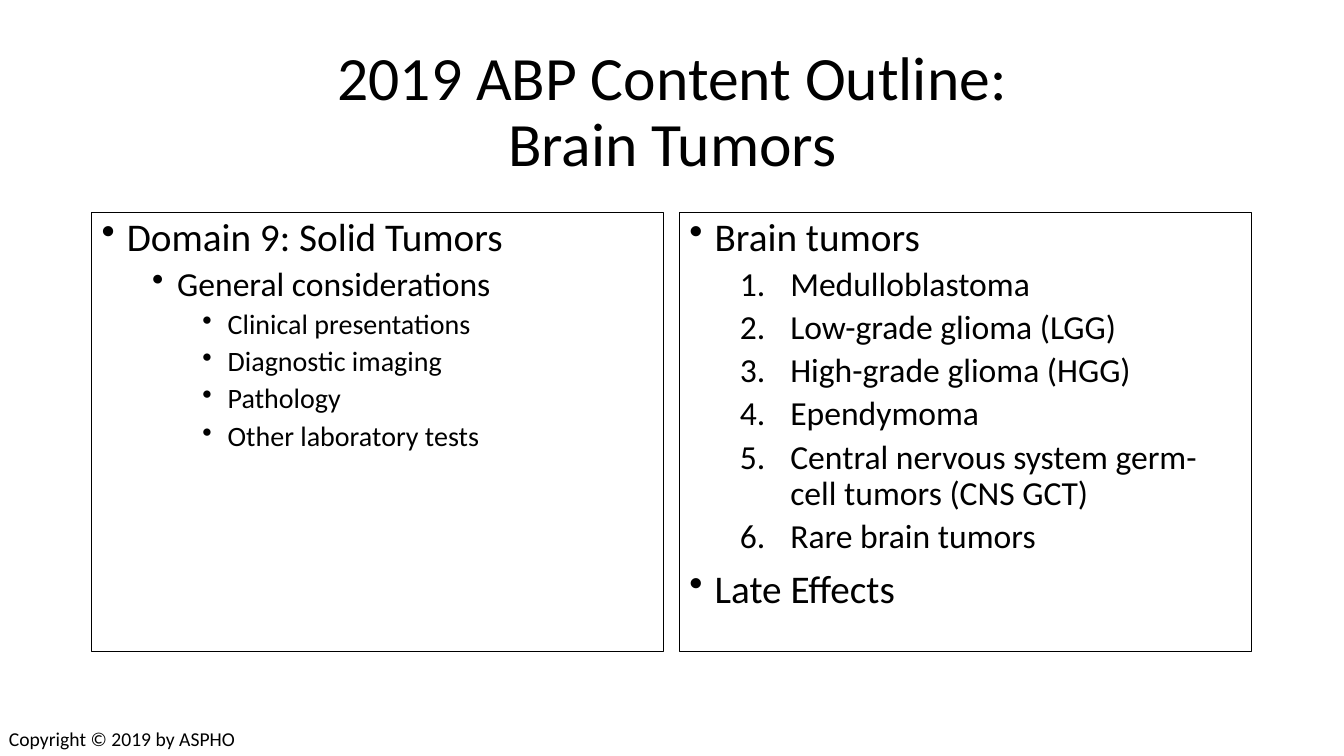
"""Build the brain tumors content outline slide."""
import pptx
import pptx.util
import pptx.dml.color
import pptx.enum.shapes
import pptx.enum.text
import pptx.oxml.ns
import lxml.etree

PX = 9144
COLORS = {"ink": "000000"}
LEFT = pptx.enum.text.PP_ALIGN.LEFT
CENTER = pptx.enum.text.PP_ALIGN.CENTER
TOP = pptx.enum.text.MSO_ANCHOR.TOP
MIDDLE = pptx.enum.text.MSO_ANCHOR.MIDDLE


def write(frame, text, size, align=LEFT, spacing=1.0, before=0, level=0,
          margin=0, hanging=0, bullet=None):
    first = not frame.paragraphs[0].runs
    paragraph = frame.paragraphs[0] if first else frame.add_paragraph()
    paragraph.text = text
    paragraph.alignment = align
    paragraph.line_spacing = spacing
    paragraph.space_before = pptx.util.Pt(0 if first else before)
    paragraph.level = level
    if bullet:
        properties = paragraph._p.get_or_add_pPr()
        properties.set("marL", str(margin * PX))
        properties.set("indent", str(-hanging * PX))
        tag, attribute, value = bullet
        mark = lxml.etree.SubElement(properties, pptx.oxml.ns.qn(tag))
        mark.set(attribute, value)
    for run in paragraph.runs:
        run.font.name = "Calibri"
        run.font.size = pptx.util.Pt(size)
        run.font.color.rgb = pptx.dml.color.RGBColor.from_string(COLORS["ink"])


DOT = ("a:buChar", "char", "•")
NUMBER = ("a:buAutoNum", "type", "arabicPeriod")
STYLES = {
    "topic": dict(size=28, before=10, level=0, margin=25, hanging=25, bullet=DOT),
    "subtopic": dict(size=24, before=5, level=1, margin=75, hanging=25, bullet=DOT),
    "detail": dict(size=20, before=5, level=2, margin=125, hanging=25, bullet=DOT),
    "numbered": dict(size=24, before=5, level=1, margin=100, hanging=50, bullet=NUMBER),
}
PANELS = [
    [
        ("topic", "Domain 9: Solid Tumors"),
        ("subtopic", "General considerations"),
        ("detail", "Clinical presentations"),
        ("detail", "Diagnostic imaging"),
        ("detail", "Pathology"),
        ("detail", "Other laboratory tests"),
    ],
    [
        ("topic", "Brain tumors"),
        ("numbered", "Medulloblastoma"),
        ("numbered", "Low-grade glioma (LGG)"),
        ("numbered", "High-grade glioma (HGG)"),
        ("numbered", "Ependymoma"),
        ("numbered", "Central nervous system germ-cell tumors (CNS GCT)"),
        ("numbered", "Rare brain tumors"),
        ("topic", "Late Effects"),
    ],
]
PANEL_LEFT, PANEL_TOP, PANEL_WIDTH, PANEL_HEIGHT, PANEL_STEP = 91, 211, 567, 435, 583

deck = pptx.Presentation()
deck.slide_width = 1333 * PX
deck.slide_height = 750 * PX
slide = deck.slides.add_slide(deck.slide_layouts[5])

heading = slide.shapes.title
heading.left, heading.top = 92 * PX, 40 * PX
heading.width, heading.height = 1150 * PX, 145 * PX
heading.text_frame.word_wrap = True
heading.text_frame.vertical_anchor = MIDDLE
write(heading.text_frame, "2019 ABP Content Outline:\vBrain Tumors", size=44,
      align=CENTER, spacing=0.9)

for column, outline in enumerate(PANELS):
    panel = slide.shapes.add_shape(
        pptx.enum.shapes.MSO_SHAPE.RECTANGLE,
        (PANEL_LEFT + column * PANEL_STEP) * PX, PANEL_TOP * PX,
        PANEL_WIDTH * PX, PANEL_HEIGHT * PX)
    panel.shadow.inherit = False
    panel.fill.background()
    panel.line.color.rgb = pptx.dml.color.RGBColor.from_string(COLORS["ink"])
    panel.line.width = pptx.util.Pt(0.75)
    panel.text_frame.word_wrap = True
    panel.text_frame.vertical_anchor = TOP
    for style, entry in outline:
        write(panel.text_frame, entry, spacing=0.9, **STYLES[style])

copyright_line = slide.shapes.add_textbox(-1 * PX, 716 * PX, 248 * PX, 34 * PX)
copyright_line.text_frame.word_wrap = True
copyright_line.text_frame.auto_size = pptx.enum.text.MSO_AUTO_SIZE.SHAPE_TO_FIT_TEXT
write(copyright_line.text_frame, "Copyright © 2019 by ASPHO", size=14)

deck.save("out.pptx")
